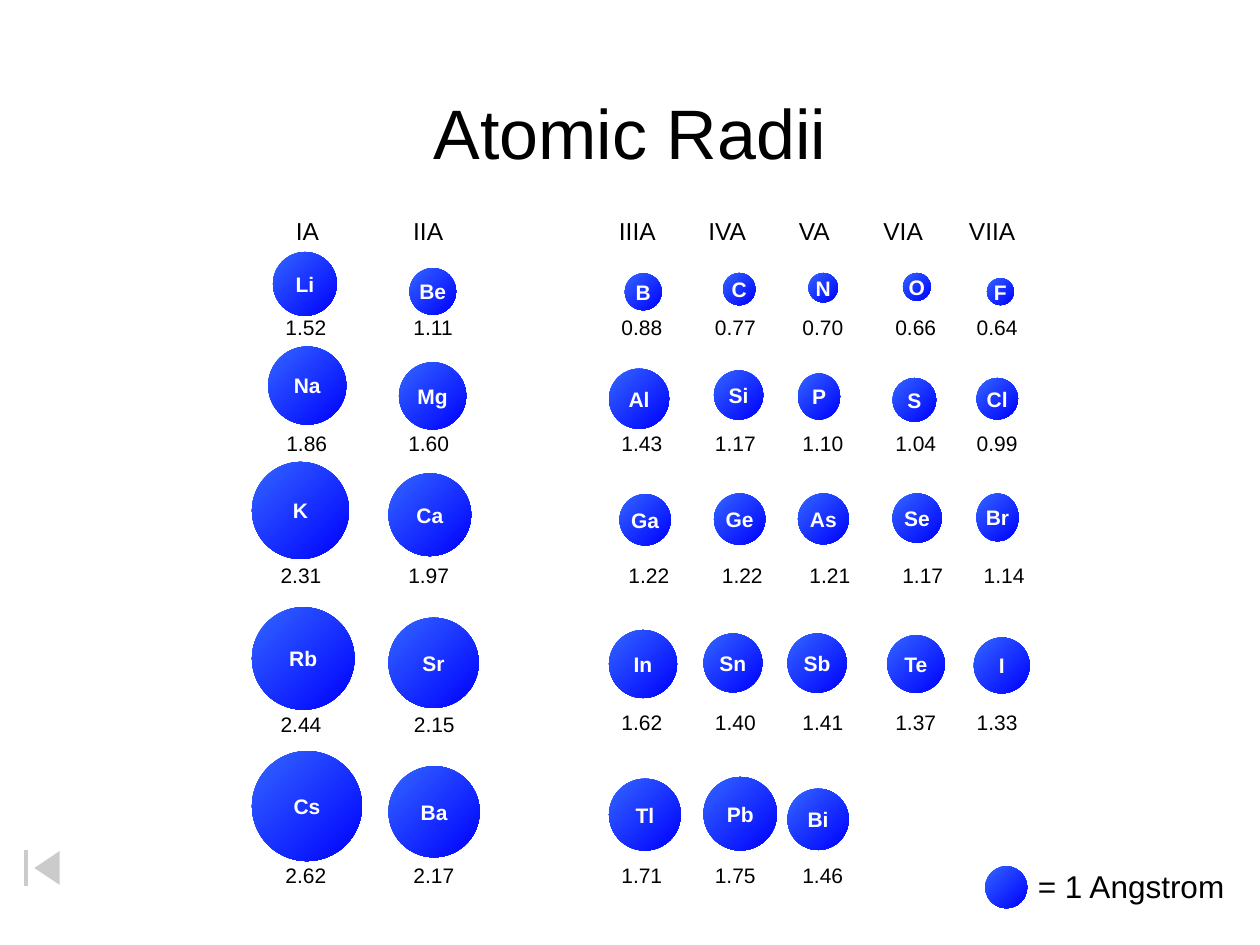
from collections import namedtuple

from lxml.etree import SubElement
from pptx import Presentation
from pptx.dml.color import RGBColor
from pptx.enum.shapes import MSO_SHAPE
from pptx.enum.text import MSO_ANCHOR, PP_ALIGN
from pptx.oxml.ns import qn
from pptx.util import Pt

COLORS = {
    "text": "000000",
    "light": "FFFFFF",
    "atom_start": "3366FF",
    "atom_end": "0000FF",
}
FONT = "Arial"
POINTS_PER_ANGSTROM = 24
MAIN_GROUPS = ["IA", "IIA", "IIIA", "IVA", "VA", "VIA", "VIIA"]
HEADING_TABS = [67, 184.6, 235.7, 287.4, 335.7, 384.6]
RIGHT_TABS = [53.4, 103.4, 156.5, 203]
NARROW_WIDTHS = {"P": 24, "Br": 24}

Atom = namedtuple("Atom", "symbol radius left top")
Period = namedtuple("Period", "left_caption left_tab right_caption atoms")

PERIODS = [
    Period((156, 176.4), 73.2, (348, 176.2), [
        Atom("Li", 1.52, 156, 144), Atom("Be", 1.11, 234, 153.2),
        Atom("B", 0.88, 357, 156.2), Atom("C", 0.77, 413.2, 156),
        Atom("N", 0.70, 462, 156), Atom("O", 0.66, 516, 156),
        Atom("F", 0.64, 564, 159)]),
    Period((156.5, 242.5), 69.7, (348, 242.5), [
        Atom("Na", 1.86, 153.2, 198), Atom("Mg", 1.60, 228, 207),
        Atom("Al", 1.43, 348, 210.7), Atom("Si", 1.17, 408, 211.7),
        Atom("P", 1.10, 456, 213.4), Atom("S", 1.04, 510, 216),
        Atom("Cl", 0.99, 558, 216)]),
    Period((153.2, 318), 73, (352, 318), [
        Atom("K", 2.31, 144, 264), Atom("Ca", 1.97, 222, 270.5),
        Atom("Ga", 1.22, 354, 282.4), Atom("Ge", 1.22, 408, 282),
        Atom("As", 1.21, 456, 282), Atom("Se", 1.17, 510, 282),
        Atom("Br", 1.14, 558, 282)]),
    Period((153.2, 403), 76.2, (348, 402), [
        Atom("Rb", 2.44, 144, 347), Atom("Sr", 2.15, 222, 353),
        Atom("In", 1.62, 348, 360), Atom("Sn", 1.40, 402, 362),
        Atom("Sb", 1.41, 450, 362), Atom("Te", 1.37, 507, 363),
        Atom("I", 1.33, 556.5, 364.3)]),
    Period((156, 489.5), 73.2, (348, 489.5), [
        Atom("Cs", 2.62, 144, 429.2), Atom("Ba", 2.17, 222, 437.8),
        Atom("Tl", 1.71, 348, 445), Atom("Pb", 1.75, 402, 444),
        Atom("Bi", 1.46, 450, 450.7)]),
]


def color(name):
    return RGBColor.from_string(COLORS[name])


def apply_format(target, values):
    for name, value in values.items():
        setattr(target, name, value)


def write_text(shape, text, size, color_name="text", bold=False, alignment=PP_ALIGN.LEFT):
    paragraph = shape.text_frame.paragraphs[0]
    paragraph.alignment = alignment
    run = paragraph.add_run()
    run.text = text
    apply_format(run.font, {"name": FONT, "size": Pt(size), "bold": bold})
    run.font.color.rgb = color(color_name)
    return paragraph


def add_title(slide, text):
    title = slide.shapes.title
    apply_format(title, {"left": Pt(54), "top": Pt(30), "width": Pt(612), "height": Pt(90)})
    title.text_frame.vertical_anchor = MSO_ANCHOR.MIDDLE
    write_text(title, text, 40, alignment=PP_ALIGN.CENTER)


def add_tabbed_text(shapes, texts, tabs, position, extent, size):
    left, top = position
    width, height = extent
    box = shapes.add_textbox(Pt(left), Pt(top), Pt(width), Pt(height))
    box.text_frame.word_wrap = True
    paragraph = write_text(box, "\t".join(texts), size)
    if tabs:
        tab_list = SubElement(paragraph._p.get_or_add_pPr(), qn("a:tabLst"))
        for offset in tabs:
            SubElement(tab_list, qn("a:tab"), pos=str(int(Pt(offset))), algn="l")


def add_sphere(shapes, left, top, width, height):
    sphere = shapes.add_shape(MSO_SHAPE.OVAL, Pt(left), Pt(top), Pt(width), Pt(height))
    sphere.shadow.inherit = False
    sphere.line.fill.background()
    sphere.fill.gradient()
    sphere.fill.gradient_angle = 315
    for stop, name in zip(sphere.fill.gradient_stops, ("atom_start", "atom_end")):
        stop.color.rgb = color(name)
    return sphere


def add_atom(shapes, atom):
    diameter = atom.radius * POINTS_PER_ANGSTROM
    width = NARROW_WIDTHS.get(atom.symbol, diameter)
    sphere = add_sphere(shapes, atom.left, atom.top, width, diameter)
    apply_format(sphere.text_frame, {"word_wrap": False, "vertical_anchor": MSO_ANCHOR.MIDDLE})
    write_text(sphere, atom.symbol, 12, "light", True, PP_ALIGN.CENTER)


def add_period(shapes, period):
    for atom in period.atoms:
        add_atom(shapes, atom)
    radii = [f"{atom.radius:.2f}" for atom in period.atoms]
    right_radii = radii[2:]
    right_tabs = RIGHT_TABS[:len(right_radii) - 1]
    right_width = right_tabs[-1] + 39
    add_tabbed_text(shapes, radii[:2], [period.left_tab], period.left_caption, (118, 21.6), 12)
    add_tabbed_text(shapes, right_radii, right_tabs, period.right_caption, (right_width, 21.6), 12)


def add_back_button(slide):
    button = slide.shapes.add_shape(
        MSO_SHAPE.ACTION_BUTTON_BEGINNING, Pt(0), Pt(482), Pt(48), Pt(28))
    button.shadow.inherit = False
    button.fill.solid()
    button.fill.fore_color.rgb = color("light")
    fill_color = button._element.spPr.find(qn("a:solidFill")).find(qn("a:srgbClr"))
    SubElement(fill_color, qn("a:alpha"), val="50000")
    button.line.color.rgb = color("light")
    button.line.width = Pt(0.75)


def add_legend(slide):
    shapes = slide.shapes.add_group_shape().shapes
    add_sphere(shapes, 563, 495, POINTS_PER_ANGSTROM, POINTS_PER_ANGSTROM)
    add_tabbed_text(shapes, ["= 1 Angstrom"], [], (586, 492), (124, 28.8), 18)


def main():
    presentation = Presentation()
    apply_format(presentation, {"slide_width": Pt(720), "slide_height": Pt(540)})
    slide = presentation.slides.add_slide(presentation.slide_layouts[5])
    add_title(slide, "Atomic Radii")
    add_back_button(slide)
    table_shapes = slide.shapes.add_group_shape().shapes
    for period in PERIODS:
        add_period(table_shapes, period)
    add_tabbed_text(slide.shapes, MAIN_GROUPS, HEADING_TABS, (162, 120), (431, 24), 14)
    add_legend(slide)
    presentation.save("out.pptx")


if __name__ == "__main__":
    main()
